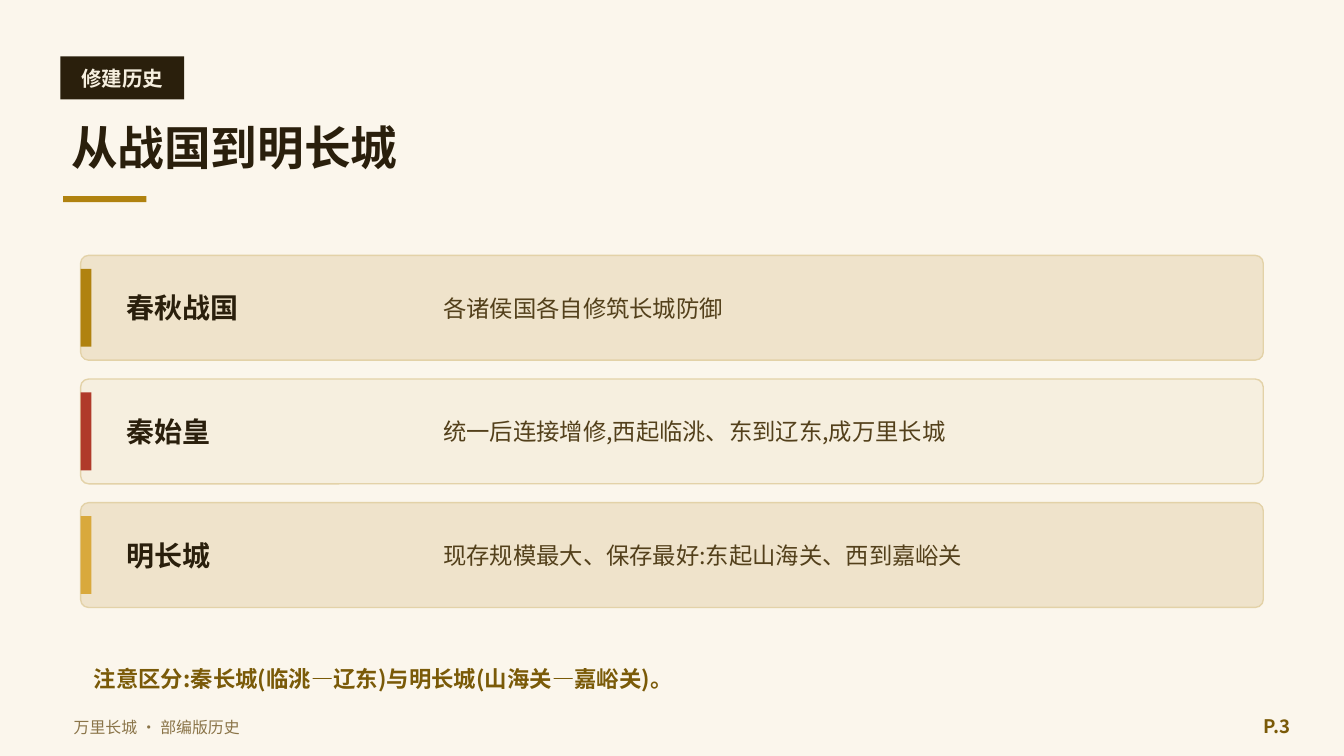
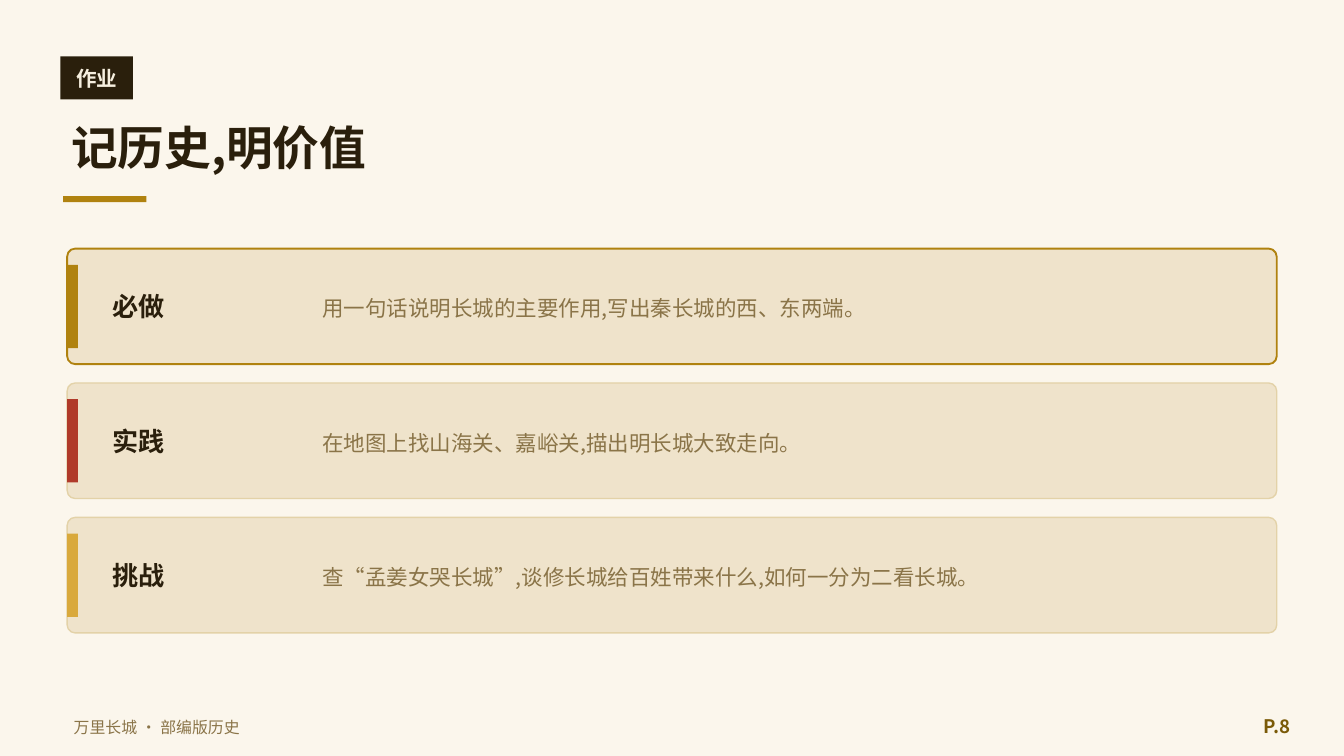
from pptx import Presentation
from pptx.dml.color import RGBColor
from pptx.enum.shapes import MSO_SHAPE as Kind
from pptx.enum.text import MSO_ANCHOR as Anchor, MSO_AUTO_SIZE as Fit, PP_ALIGN as Align
from pptx.oxml.ns import qn
from pptx.util import Inches, Pt
from lxml.etree import SubElement

FONT = "Noto Sans CJK SC"
PAPER, CREAM, SAND, EDGE = "FBF6EC", "F6EFDF", "EFE3CB", "E3D2A8"
INK, BROWN, MUTED, DEEP = "2A1F0C", "53401B", "8A7448", "7A5A08"
GOLD, RED, AMBER = "B0820F", "B03A2A", "D9A93C"
BARS = (GOLD, RED, AMBER)
WIDE = Inches(10)
HIGH = WIDE * 9 // 16
CELL = WIDE // 100


def grid(*units):
    return [round(unit * CELL) for unit in units]


def paint(target, color):
    target.solid()
    target.fore_color.rgb = RGBColor.from_string(color)


def write(shape, text, size, color, bold=False, align=Align.LEFT, lead=None):
    frame = shape.text_frame
    frame.text = text
    frame.word_wrap = True
    frame.auto_size = Fit.NONE
    frame.vertical_anchor = Anchor.MIDDLE
    para = frame.paragraphs[0]
    para.alignment = align
    if lead:
        para.line_spacing = Pt(lead)
    for run in para.runs:
        font = run.font
        font.name, font.size, font.bold = FONT, Pt(size), bold
        paint(font.fill, color)
        SubElement(font._element, qn("a:ea"), typeface=FONT)


def label(slide, box, text, size, color, **style):
    write(slide.shapes.add_textbox(*grid(*box)), text, size, color, **style)


def block(slide, box, color, kind=Kind.RECTANGLE):
    shape = slide.shapes.add_shape(kind, *grid(*box))
    shape.shadow.inherit = False
    paint(shape.fill, color)
    shape.line.fill.background()
    return shape


def card(slide, box, fill, edge, weight, bar, inset):
    left, top, width, height = box
    shape = block(slide, box, fill, Kind.ROUNDED_RECTANGLE)
    shape.adjustments[0] = 0.6 / height
    paint(shape.line.fill, edge)
    shape.line.width = Pt(weight)
    block(slide, (left, top + inset, 0.8, height - 2 * inset), bar)


def frame(deck, tag, title, page):
    slide = deck.slides.add_slide(deck.slide_layouts[5])
    width = 1.6 + 1.9 * len(tag)
    block(slide, (4.5, 4.2, width, 3.2), INK)
    label(slide, (4.5, 4.1, width, 3.4), tag, 11, CREAM, bold=True, align=Align.CENTER)
    head = slide.shapes.title
    head.left, head.top, head.width, head.height = grid(4.3, 7.8, 90, 6.2)
    write(head, title, 25, INK, bold=True)
    block(slide, (4.7, 14.6, 6.2, 0.45), GOLD)
    label(slide, (4.5, 52.6, 60, 3), "万里长城 · 部编版历史", 8.5, MUTED)
    label(slide, (91, 52.45, 6, 3.2), f"P.{page}", 10, DEEP, bold=True, align=Align.RIGHT)
    return slide


def history(deck):
    slide = frame(deck, "修建历史", "从战国到明长城", 3)
    eras = (
        ("春秋战国", "各诸侯国各自修筑长城防御"),
        ("秦始皇", "统一后连接增修,西起临洮、东到辽东,成万里长城"),
        ("明长城", "现存规模最大、保存最好:东起山海关、西到嘉峪关"),
    )
    for row, (name, text) in enumerate(eras):
        top = 19 + 9.2 * row
        fill = CREAM if row % 2 else SAND
        card(slide, (6, top, 88, 7.8), fill, EDGE, 0.75, BARS[row], 1)
        label(slide, (8.4, top, 22, 7.8), name, 15, INK, bold=True)
        label(slide, (32, top, 60, 7.8), text, 12.5, BROWN)
    note = "注意区分:秦长城(临洮—辽东)与明长城(山海关—嘉峪关)。"
    label(slide, (6, 48.5, 88, 4), note, 12, DEEP, bold=True)


def homework(deck):
    slide = frame(deck, "作业", "记历史,明价值", 8)
    tasks = (
        ("必做", "用一句话说明长城的主要作用,写出秦长城的西、东两端。"),
        ("实践", "在地图上找山海关、嘉峪关,描出明长城大致走向。"),
        ("挑战", "查“孟姜女哭长城”,谈修长城给百姓带来什么,如何一分为二看长城。"),
    )
    for row, (name, text) in enumerate(tasks):
        top = 18.5 + 10 * row
        edge, weight = (EDGE, 0.75) if row else (GOLD, 1)
        card(slide, (5, top, 90, 8.6), SAND, edge, weight, BARS[row], 1.2)
        label(slide, (7.4, top + 1, 14, 6.6), name, 14, INK, bold=True)
        label(slide, (23, top + 0.8, 70, 7), text, 11.5, MUTED, lead=16)


def main():
    deck = Presentation()
    deck.slide_width, deck.slide_height = WIDE, HIGH
    paint(deck.slide_master.background.fill, PAPER)
    history(deck)
    homework(deck)
    deck.save("out.pptx")


if __name__ == "__main__":
    main()
